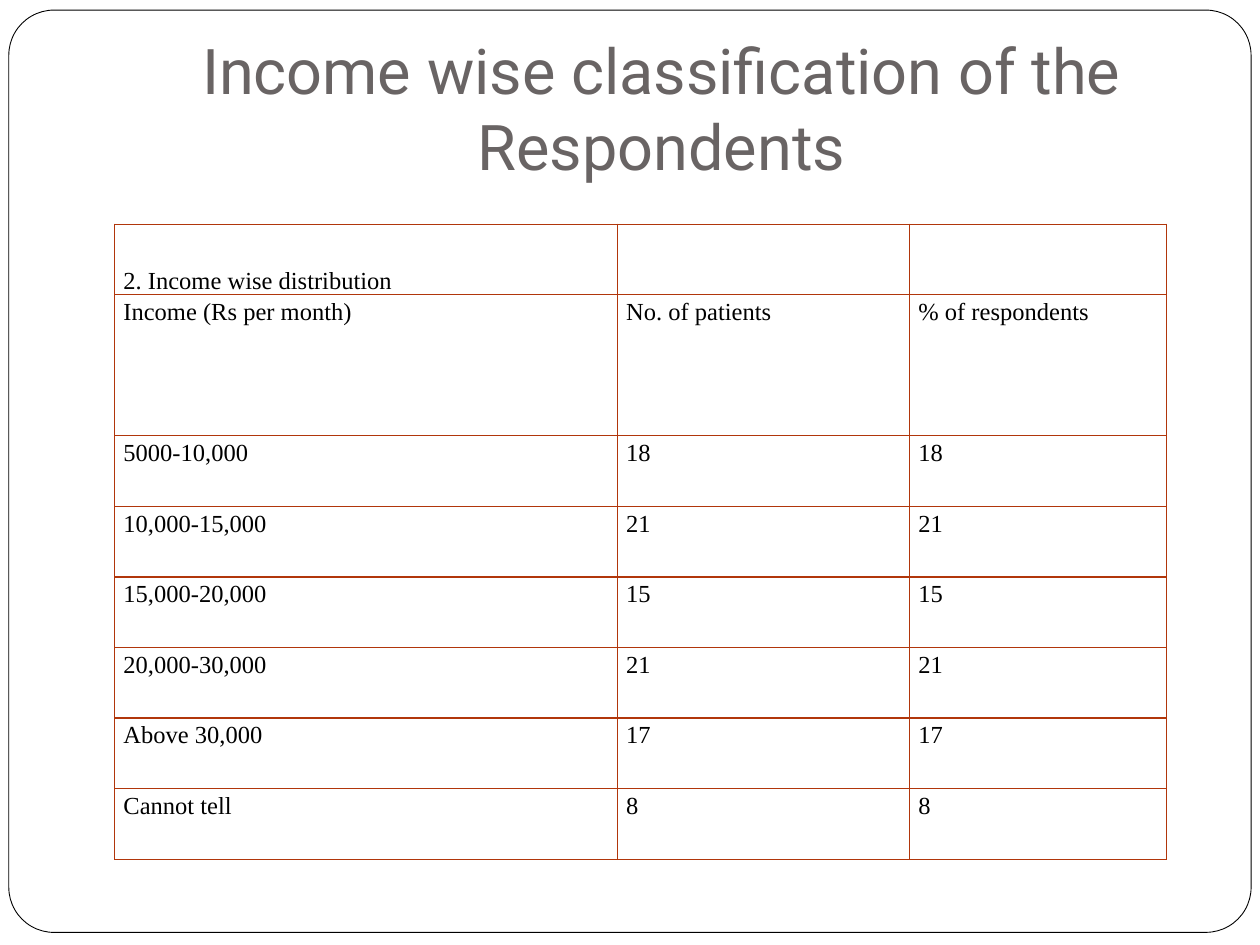
"""Build the slide that classifies respondents by income."""
from lxml.etree import SubElement
from pptx import Presentation
from pptx.dml.color import RGBColor
from pptx.enum.shapes import MSO_SHAPE
from pptx.enum.text import MSO_ANCHOR, MSO_AUTO_SIZE, PP_ALIGN
from pptx.oxml.ns import qn
from pptx.util import Inches, Pt

WHITE = RGBColor(0xFF, 0xFF, 0xFF)
BLACK = RGBColor(0, 0, 0)
GREY = RGBColor(0x69, 0x64, 0x64)
RUST = RGBColor(0xB1, 0x36, 0x0B)

INCOME_GROUPS = [
    ("5000-10,000", 18),
    ("10,000-15,000", 21),
    ("15,000-20,000", 15),
    ("20,000-30,000", 21),
    ("Above 30,000", 17),
    ("Cannot tell", 8),
]
ROWS = [
    ("2. Income wise distribution", "", ""),
    ("Income (Rs per month)", "No. of patients", "% of respondents"),
    *((income, str(count), str(count)) for income, count in INCOME_GROUPS),
]
COLUMN_WIDTHS = [3.99, 2.32, 2.04]
ROW_HEIGHTS = [0.56, 1.12] + [0.56] * len(INCOME_GROUPS)


class SlideBuilder:
    title_font = "Roboto"
    table_font = "Times New Roman"

    def __init__(self, page):
        self.page = page

    def add_frame(self, left, top, width, height):
        frame = self.page.shapes.add_shape(
            MSO_SHAPE.ROUNDED_RECTANGLE,
            Inches(left), Inches(top), Inches(width), Inches(height))
        frame.adjustments[0] = 0.049
        frame.shadow.inherit = False
        frame.fill.solid()
        frame.fill.fore_color.rgb = WHITE
        frame.line.color.rgb = BLACK
        frame.line.width = Pt(0.5)
        self.page.shapes._spTree.insert(2, frame._element)

    def set_title(self, text, left, top, width, height):
        title = self.page.shapes.title
        title.left, title.top = Inches(left), Inches(top)
        title.width, title.height = Inches(width), Inches(height)
        box = title.text_frame
        box.text = text
        box.word_wrap = True
        box.auto_size = MSO_AUTO_SIZE.NONE
        box.vertical_anchor = MSO_ANCHOR.BOTTOM
        box.margin_bottom = Inches(0.1)
        para = box.paragraphs[0]
        para.alignment = PP_ALIGN.CENTER
        self.set_font(para, self.title_font, 36, GREY)

    def add_table(self, left, top):
        table = self.page.shapes.add_table(
            len(ROWS), len(COLUMN_WIDTHS), Inches(left), Inches(top),
            Inches(sum(COLUMN_WIDTHS)), Inches(sum(ROW_HEIGHTS))).table
        table.first_row = table.horz_banding = False
        for column, width in zip(table.columns, COLUMN_WIDTHS):
            column.width = Inches(width)
        for row, height, texts in zip(table.rows, ROW_HEIGHTS, ROWS):
            row.height = Inches(height)
            for cell, text in zip(row.cells, texts):
                self.fill_cell(cell, text)
        for cell in table.rows[0].cells:
            cell.vertical_anchor = MSO_ANCHOR.BOTTOM
            cell.text_frame.paragraphs[0].alignment = PP_ALIGN.LEFT

    def fill_cell(self, cell, text):
        cell.text = text
        cell.margin_left = cell.margin_right = Inches(0.07)
        cell.margin_top = cell.margin_bottom = 0
        para = cell.text_frame.paragraphs[0]
        para.alignment = PP_ALIGN.JUSTIFY
        para.line_spacing = 1.15
        self.set_font(para, self.table_font, 14, BLACK)
        properties = cell._tc.get_or_add_tcPr()
        for side in ("a:lnL", "a:lnR", "a:lnT", "a:lnB"):
            border = SubElement(properties, qn(side), w=str(Pt(0.75)))
            paint = SubElement(border, qn("a:solidFill"))
            SubElement(paint, qn("a:srgbClr"), val=str(RUST))
        cell.fill.background()

    def set_font(self, para, name, size, color):
        para.font.name = name
        para.font.size = Pt(size)
        para.font.color.rgb = color


def main():
    deck = Presentation()
    deck.slide_width, deck.slide_height = Inches(10), Inches(7.5)
    builder = SlideBuilder(deck.slides.add_slide(deck.slide_layouts[5]))
    builder.add_frame(0.07, 0.08, 9.86, 7.32)
    builder.set_title("Income wise classification of the Respondents", 1, 0.3, 8.5, 1.25)
    builder.add_table(0.91, 1.78)
    deck.save("out.pptx")


if __name__ == "__main__":
    main()
